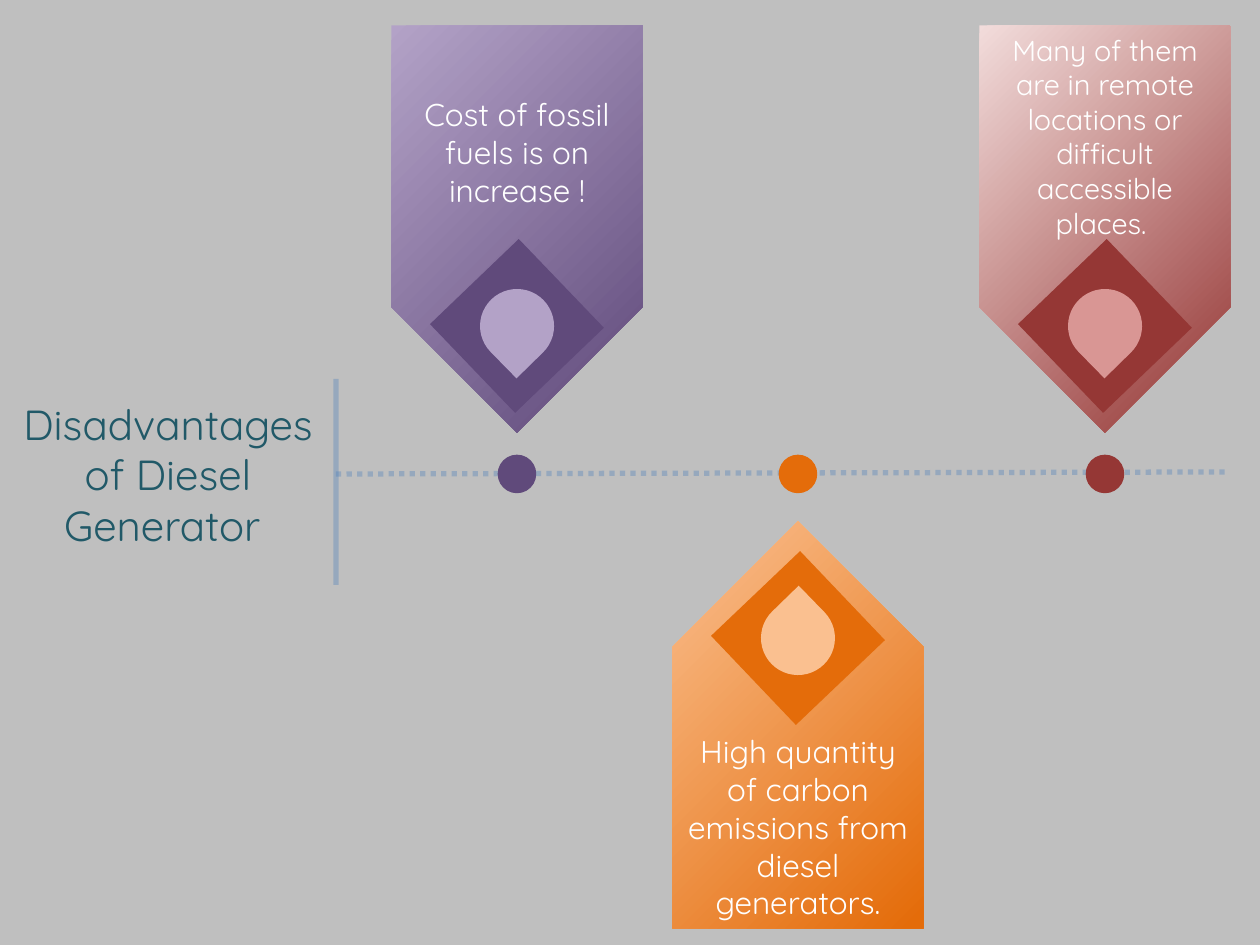
"""Build a timeline slide on the disadvantages of diesel generators."""
from lxml.etree import SubElement
from pptx import Presentation
from pptx.dml.color import RGBColor
from pptx.enum.dml import MSO_LINE_DASH_STYLE as Dash
from pptx.enum.shapes import MSO_CONNECTOR as Connector, MSO_SHAPE as Shape
from pptx.enum.text import MSO_ANCHOR as Anchor, MSO_AUTO_SIZE as AutoSize, PP_ALIGN as Align
from pptx.oxml import parse_xml
from pptx.oxml.ns import nsdecls, qn
from pptx.util import Pt

EMU_PER_PX = 914400 / 126
FONT = "Quicksand"
GRAY = RGBColor(0xBF, 0xBF, 0xBF)
TEAL = RGBColor(0x21, 0x59, 0x68)
BLUE = RGBColor(0x4A, 0x7E, 0xBB)
WHITE = RGBColor(0xFF, 0xFF, 0xFF)
PURPLE = RGBColor(0x60, 0x4A, 0x7B)
LILAC = RGBColor(0xB3, 0xA2, 0xC7)
ORANGE = RGBColor(0xE4, 0x6C, 0x0A)
PEACH = RGBColor(0xFA, 0xC0, 0x90)
RED = RGBColor(0x95, 0x37, 0x35)
ROSE = RGBColor(0xD9, 0x96, 0x94)
BLUSH = RGBColor(0xF2, 0xDC, 0xDB)

TITLE = "Disadvantages of Diesel Generator "
POINTS = [
    dict(text="Cost of fossil fuels is on increase !", center=517, above=True,
         dark=PURPLE, light=LILAC, drop=LILAC, text_top=89, text_height=127, size=18),
    dict(text="High quantity of carbon emissions from diesel generators.", center=798, above=False,
         dark=ORANGE, light=PEACH, drop=PEACH, text_top=726, text_height=204, size=18),
    dict(text="Many of them are in remote locations or difficult accessible places. ", center=1105,
         above=True, dark=RED, light=BLUSH, drop=ROSE, text_top=26, text_height=223, size=16.5),
]
AXIS_X, AXIS_Y = 336, 474
TAG_LENGTH, TAG_WIDTH = 407, 251
DOT, DIAMOND, DROP = 35, 123, 74
ABOVE = dict(tag_y=229, icon_y=326, tag_turn=90, diamond_turn=316.2, drop_turn=135.6)
BELOW = dict(tag_y=725, icon_y=638, tag_turn=270, diamond_turn=136.4, drop_turn=315.8)


def px(*lengths):
    return [round(length * EMU_PER_PX) for length in lengths]


def write(shape, text, size, color):
    frame = shape.text_frame
    frame.word_wrap = True
    frame.auto_size = AutoSize.SHAPE_TO_FIT_TEXT
    frame.vertical_anchor = Anchor.TOP
    paragraph = frame.paragraphs[0]
    paragraph.alignment = Align.CENTER
    run = paragraph.add_run()
    run.text = text
    run.font.name, run.font.size, run.font.color.rgb = FONT, Pt(size), color


def add_centered(shapes, kind, center, middle, width, height, color, turn=0):
    shape = shapes.add_shape(kind, *px(center - width / 2, middle - height / 2, width, height))
    shape.shadow.inherit = False
    shape.rotation = turn
    shape.fill.solid()
    shape.fill.fore_color.rgb = color
    shape.line.fill.background()
    return shape


def set_corner_gradient(shape, dark, light):
    properties = shape.element.spPr
    gradient = parse_xml(
        f'<a:gradFill {nsdecls("a")} rotWithShape="0"><a:gsLst>'
        f'<a:gs pos="2000"><a:srgbClr val="{dark}"/></a:gs>'
        f'<a:gs pos="100000"><a:srgbClr val="{light}"/></a:gs></a:gsLst>'
        '<a:path path="circle"><a:fillToRect l="100000" t="100000"/></a:path></a:gradFill>')
    properties.replace(properties.find(qn("a:solidFill")), gradient)


def add_line(shapes, start, end, dash):
    line = shapes.add_connector(Connector.STRAIGHT, *px(*start, *end))
    line.line.color.rgb, line.line.width, line.line.dash_style = BLUE, Pt(3), dash
    color = line.element.spPr.find(".//" + qn("a:srgbClr"))
    SubElement(color, qn("a:alpha"), val="35000")
    SubElement(line.element.spPr, qn("a:effectLst"))


def add_point(shapes, point):
    center, dark = point["center"], point["dark"]
    side = ABOVE if point["above"] else BELOW
    dot = add_centered(shapes, Shape.OVAL, center, AXIS_Y, DOT, DOT, dark)
    dot.line.color.rgb, dot.line.width = dark, Pt(2)

    group = shapes.add_group_shape().shapes
    tag = add_centered(group, Shape.PENTAGON, center, side["tag_y"],
                       TAG_LENGTH, TAG_WIDTH, dark, side["tag_turn"])
    set_corner_gradient(tag, dark, point["light"])
    add_centered(group, Shape.RECTANGLE, center, side["icon_y"],
                 DIAMOND, DIAMOND, dark, side["diamond_turn"])
    add_centered(group, Shape.TEAR, center, side["icon_y"],
                 DROP, DROP, point["drop"], side["drop_turn"])

    box = shapes.add_textbox(*px(center - TAG_WIDTH / 2, point["text_top"],
                                 TAG_WIDTH, point["text_height"]))
    write(box, point["text"], point["size"], WHITE)


def main():
    presentation = Presentation()
    presentation.slide_width, presentation.slide_height = px(1260, 945)
    slide = presentation.slides.add_slide(presentation.slide_layouts[5])
    slide.background.fill.solid()
    slide.background.fill.fore_color.rgb = GRAY

    title = slide.shapes.title
    title.left, title.top, title.width, title.height = px(0, 392, AXIS_X, 165)
    write(title, TITLE, 24, TEAL)
    add_line(slide.shapes, (AXIS_X, AXIS_Y), (1225, 472), Dash.ROUND_DOT)
    add_line(slide.shapes, (AXIS_X, 379), (AXIS_X, 585), Dash.SOLID)
    for point in POINTS:
        add_point(slide.shapes, point)
    presentation.save("out.pptx")


if __name__ == "__main__":
    main()
